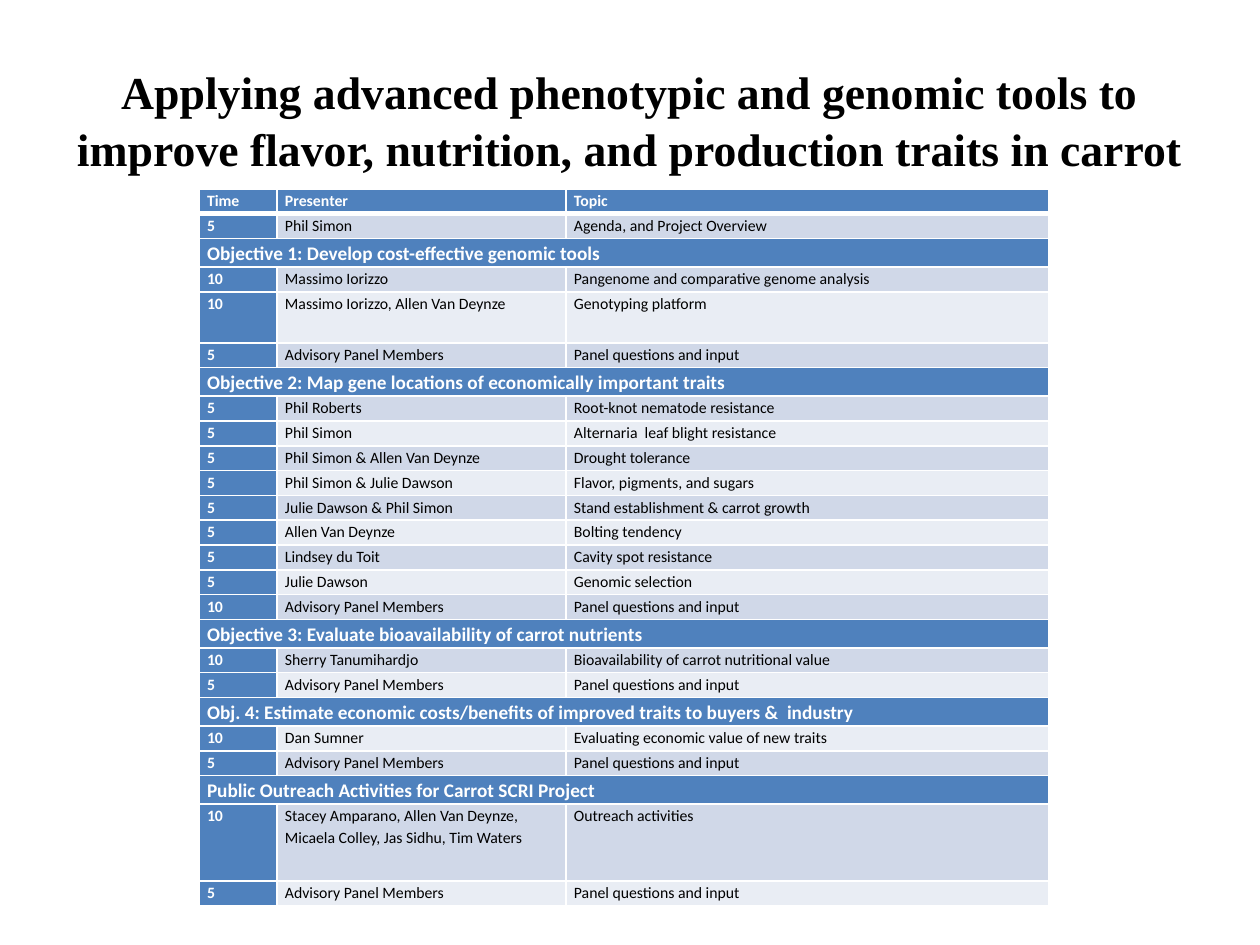
from dataclasses import dataclass

from lxml import etree
from pptx import Presentation
from pptx.dml.color import RGBColor
from pptx.enum.text import MSO_ANCHOR, MSO_AUTO_SIZE, PP_ALIGN
from pptx.oxml.ns import qn
from pptx.util import Emu, Pt

CENTER, LEFT = PP_ALIGN.CENTER, PP_ALIGN.LEFT
MIDDLE, TOP = MSO_ANCHOR.MIDDLE, MSO_ANCHOR.TOP
NO_AUTOFIT = MSO_AUTO_SIZE.NONE
TITLE_ONLY = 5
EMU_PER_PX = 914400 / 126


@dataclass(frozen=True)
class Theme:
    header_fill: str = "4F81BD"
    dark_band: str = "D0D8E8"
    light_band: str = "E9EDF4"
    dark_text: str = "000000"
    white: str = "FFFFFF"
    title_font: str = "Times New Roman"
    body_font: str = "Calibri"
    title_size: float = 26.1
    section_size: float = 11
    body_size: float = 9
    thin_border: float = 1
    thick_border: float = 3


THEME = Theme()

TITLE = ("Applying advanced phenotypic and genomic tools to improve flavor, "
         "nutrition, and production traits in carrot")
PANEL = ("Advisory Panel Members", "Panel questions and input")

# A one-item row is a section heading across the whole table
AGENDA = [
    ("Time", "Presenter", "Topic"),
    ("5", "Phil Simon", "Agenda, and Project Overview"),
    ("Objective 1: Develop cost-effective genomic tools",),
    ("10", "Massimo Iorizzo", "Pangenome and comparative genome analysis"),
    ("10", "Massimo Iorizzo, Allen Van Deynze", "Genotyping platform"),
    ("5", *PANEL),
    ("Objective 2: Map gene locations of economically important traits",),
    ("5", "Phil Roberts", "Root-knot nematode resistance"),
    ("5", "Phil Simon", "Alternaria  leaf blight resistance"),
    ("5", "Phil Simon & Allen Van Deynze", "Drought tolerance"),
    ("5", "Phil Simon & Julie Dawson", "Flavor, pigments, and sugars"),
    ("5", "Julie Dawson & Phil Simon", "Stand establishment & carrot growth"),
    ("5", "Allen Van Deynze", "Bolting tendency"),
    ("5", "Lindsey du Toit", "Cavity spot resistance"),
    ("5", "Julie Dawson", "Genomic selection"),
    ("10", *PANEL),
    ("Objective 3: Evaluate bioavailability of carrot nutrients",),
    ("10", "Sherry Tanumihardjo", "Bioavailability of carrot nutritional value"),
    ("5", *PANEL),
    ("Obj. 4: Estimate economic costs/benefits of improved traits to buyers &  industry",),
    ("10", "Dan Sumner", "Evaluating economic value of new traits"),
    ("5", *PANEL),
    ("Public Outreach Activities for Carrot SCRI Project",),
    ("10", "Stacey Amparano, Allen Van Deynze, Micaela Colley, Jas Sidhu, Tim Waters",
     "Outreach activities"),
    ("5", *PANEL),
]

# Table geometry in px; row weights share out the table height
TABLE_LEFT, TABLE_TOP, TABLE_HEIGHT = 199, 189, 718
COLUMN_WIDTHS = (78, 289, 483)
CELL_INSET = 8
ROW_WEIGHT, SECTION_WEIGHT = 20, 23
TALL_ROW_WEIGHTS = {"Genotyping platform": 41, "Outreach activities": 62}


def px(value):
    return Emu(round(value * EMU_PER_PX))


def write_text(frame, text, *, font, size, color, bold=False, align=LEFT, spacing=1.0):
    paragraph = frame.paragraphs[0]
    paragraph.alignment = align
    paragraph.line_spacing = spacing
    run = paragraph.add_run()
    run.text = text
    run.font.name = font
    run.font.size = Pt(size)
    run.font.bold = bold
    run.font.color.rgb = RGBColor.from_string(color)


def add_title(slide):
    title = slide.shapes.title
    title.left, title.top, title.width, title.height = map(px, (63, 38, 1134, 161))
    frame = title.text_frame
    frame.auto_size = NO_AUTOFIT
    frame.word_wrap = True
    frame.vertical_anchor = MIDDLE
    frame.margin_left = frame.margin_right = 0
    write_text(frame, TITLE, font=THEME.title_font, size=THEME.title_size,
               color=THEME.dark_text, bold=True, align=CENTER, spacing=1.05)


def set_borders(cell, top, bottom):
    """Draw white cell borders; the lines must come before the fill."""
    properties = cell._tc.get_or_add_tcPr()
    widths = {"a:lnL": THEME.thin_border, "a:lnR": THEME.thin_border,
              "a:lnT": top, "a:lnB": bottom}
    for position, (tag, width) in enumerate(widths.items()):
        line = etree.Element(qn(tag), w=str(Pt(width)))
        fill = etree.SubElement(line, qn("a:solidFill"))
        etree.SubElement(fill, qn("a:srgbClr"), val=THEME.white)
        properties.insert(position, line)


def format_cell(cell, row, column, is_section):
    is_blue = row == 0 or column == 0 or is_section
    band = THEME.dark_band if row % 2 else THEME.light_band
    cell.fill.solid()
    cell.fill.fore_color.rgb = RGBColor.from_string(THEME.header_fill if is_blue else band)
    cell.margin_left = cell.margin_right = px(CELL_INSET)
    cell.margin_top = cell.margin_bottom = 0
    cell.vertical_anchor = TOP
    # The heavy rule lies between the header and the first row
    set_borders(cell,
                top=THEME.thick_border if row == 1 else THEME.thin_border,
                bottom=THEME.thick_border if row == 0 else THEME.thin_border)
    return is_blue


def row_weight(entries):
    if len(entries) == 1:
        return SECTION_WEIGHT
    return TALL_ROW_WEIGHTS.get(entries[-1], ROW_WEIGHT)


def add_agenda(slide):
    table = slide.shapes.add_table(
        len(AGENDA), len(COLUMN_WIDTHS), px(TABLE_LEFT), px(TABLE_TOP),
        px(sum(COLUMN_WIDTHS)), px(TABLE_HEIGHT)).table
    for column, width in zip(table.columns, COLUMN_WIDTHS):
        column.width = px(width)

    weights = [row_weight(entries) for entries in AGENDA]
    for row, (entries, weight) in enumerate(zip(AGENDA, weights)):
        table.rows[row].height = px(TABLE_HEIGHT * weight / sum(weights))
        is_section = len(entries) == 1
        if is_section:
            table.cell(row, 0).merge(table.cell(row, len(COLUMN_WIDTHS) - 1))
        for column in range(len(COLUMN_WIDTHS)):
            cell = table.cell(row, column)
            is_blue = format_cell(cell, row, column, is_section)
            if column < len(entries):
                write_text(cell.text_frame, entries[column], font=THEME.body_font,
                           size=THEME.section_size if is_section else THEME.body_size,
                           color=THEME.white if is_blue else THEME.dark_text,
                           bold=is_blue, spacing=1.15)


def main():
    presentation = Presentation()
    presentation.slide_width, presentation.slide_height = px(1260), px(945)
    slide = presentation.slides.add_slide(presentation.slide_layouts[TITLE_ONLY])
    add_title(slide)
    add_agenda(slide)
    presentation.save("out.pptx")


if __name__ == "__main__":
    main()
